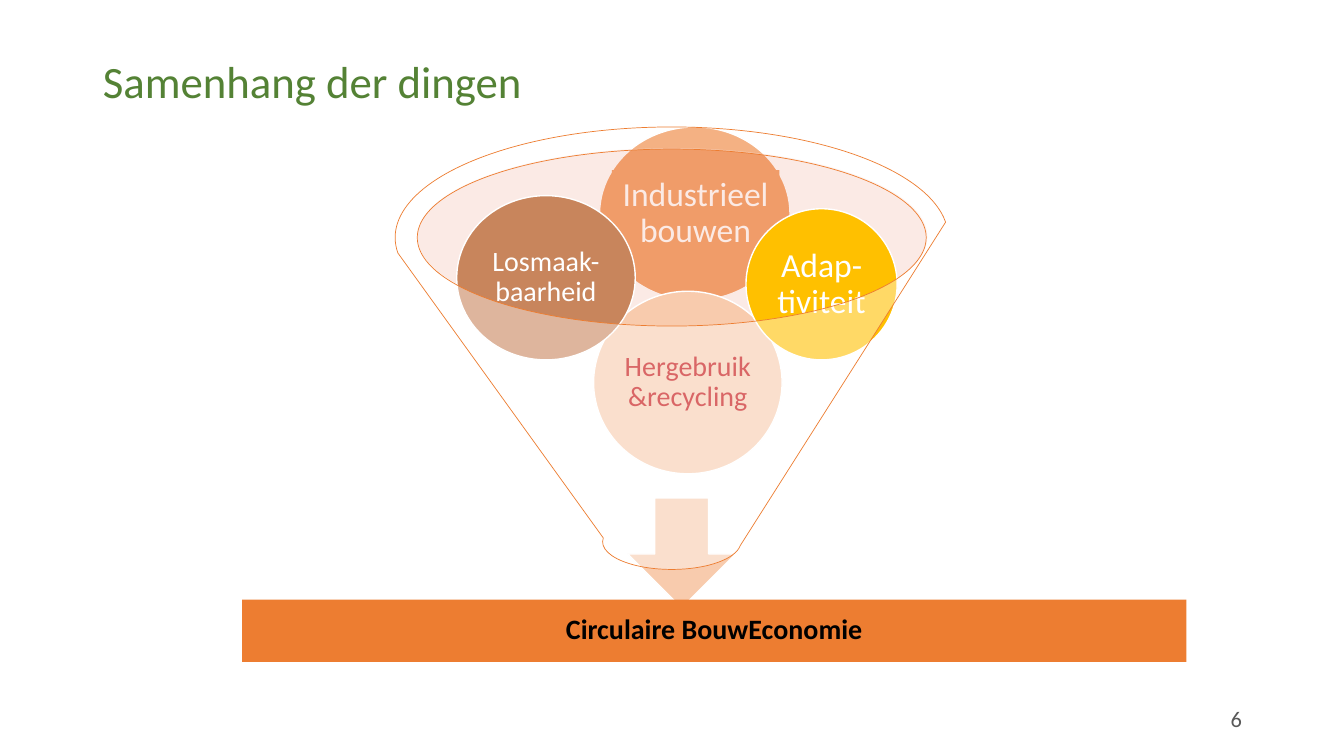
from dataclasses import dataclass

from lxml.etree import SubElement
from pptx import Presentation
from pptx.dml.color import RGBColor
from pptx.enum.shapes import MSO_SHAPE as Preset
from pptx.enum.text import MSO_ANCHOR as Anchor, PP_ALIGN as Align
from pptx.oxml.ns import qn
from pptx.util import Cm, Pt


@dataclass(frozen=True)
class Theme:
    font: str = "Calibri"
    orange: str = "ED7D31"
    peach: str = "F8CBAD"
    blush: str = "F6CCBE"
    brown: str = "C8855C"
    yellow: str = "FFC000"
    white: str = "FFFFFF"
    black: str = "000000"
    red: str = "C00000"
    green: str = "548235"
    grey: str = "595959"
    title_size: int = 32
    large_size: int = 24
    body_size: int = 20
    number_size: int = 16


THEME = Theme()


def place(shape, box):
    for side, length in zip(("left", "top", "width", "height"), box):
        setattr(shape, side, Cm(length))


def write(shape, text, size, colour, align=Align.CENTER, bold=False, inset=0.08):
    frame = shape.text_frame
    margins = {f"margin_{side}": Cm(inset) for side in ("left", "top", "right", "bottom")}
    settings = {"word_wrap": True, "vertical_anchor": Anchor.MIDDLE, **margins}
    for name, value in settings.items():
        setattr(frame, name, value)
    para = frame.paragraphs[0]
    para.alignment = align
    para.line_spacing = 0.9
    span = para.add_run()
    span.text = text
    for name, value in {"name": THEME.font, "size": Pt(size), "bold": bold}.items():
        setattr(span.font, name, value)
    span.font.color.rgb = RGBColor.from_string(colour)


def add_figure(page, preset, box, fill, line=None, line_width=1.0, opacity=None):
    """Add a preset shape; opacity is a percentage of the fill."""
    shape = page.shapes.add_shape(preset, *map(Cm, box))
    shape.shadow.inherit = False
    shape.fill.solid()
    shape.fill.fore_color.rgb = RGBColor.from_string(fill)
    if opacity is not None:
        colour = shape.fill._xPr.find(qn("a:solidFill"))[0]
        SubElement(colour, qn("a:alpha"), val=str(opacity * 1000))
    if line:
        shape.line.color.rgb = RGBColor.from_string(line)
        shape.line.width = Pt(line_width)
    else:
        shape.line.fill.background()
    return shape


def add_ball(page, box, fill, text=None, size=THEME.body_size, colour=THEME.white):
    ball = add_figure(page, Preset.OVAL, box, fill, THEME.white)
    if text:
        write(ball, text, size, colour)


def add_funnel_diagram(page):
    add_ball(page, (15.11, 3.2, 4.8, 4.37), THEME.orange)
    label = add_figure(page, Preset.RECTANGLE, (15.42, 4.29, 4.22, 2.18), THEME.orange)
    write(label, "Industrieel bouwen", THEME.large_size, THEME.white)

    add_figure(page, Preset.OVAL, (10.52, 3.73, 12.85, 4.47), THEME.blush, opacity=40)
    add_figure(page, Preset.DOWN_ARROW, (15.82, 12.55, 2.72, 2.77), THEME.peach, THEME.white)
    result = add_figure(page, Preset.RECTANGLE, (6.1, 15.11, 23.8, 1.57), THEME.orange)
    write(result, "Circulaire BouwEconomie", THEME.body_size, THEME.black, bold=True, inset=0.41)

    add_ball(page, (14.96, 7.34, 4.75, 4.6), THEME.peach, "Hergebruik &recycling", colour=THEME.red)
    add_ball(page, (11.51, 4.93, 4.5, 4.14), THEME.brown, "Losmaak-baarheid")
    add_ball(page, (18.8, 5.26, 3.81, 3.81), THEME.yellow, "Adap-tiviteit", THEME.large_size)
    add_figure(page, Preset.FUNNEL, (9.96, 3.2, 13.94, 11.15), THEME.white, THEME.orange, 0.5, opacity=40)


def main():
    deck = Presentation()
    deck.slide_width, deck.slide_height = Cm(33.87), Cm(19.05)
    page = deck.slides.add_slide(deck.slide_layouts[5])

    title = page.shapes.title
    place(title, (2.34, 1.02, 29.21, 2.18))
    write(title, "Samenhang der dingen", THEME.title_size, THEME.green, Align.LEFT, inset=0.25)

    add_funnel_diagram(page)

    number = page.shapes.add_textbox(*map(Cm, (23.93, 17.65, 7.62, 1.02)))
    write(number, "6", THEME.number_size, THEME.grey, Align.RIGHT, inset=0.25)
    deck.save("out.pptx")


if __name__ == "__main__":
    main()
